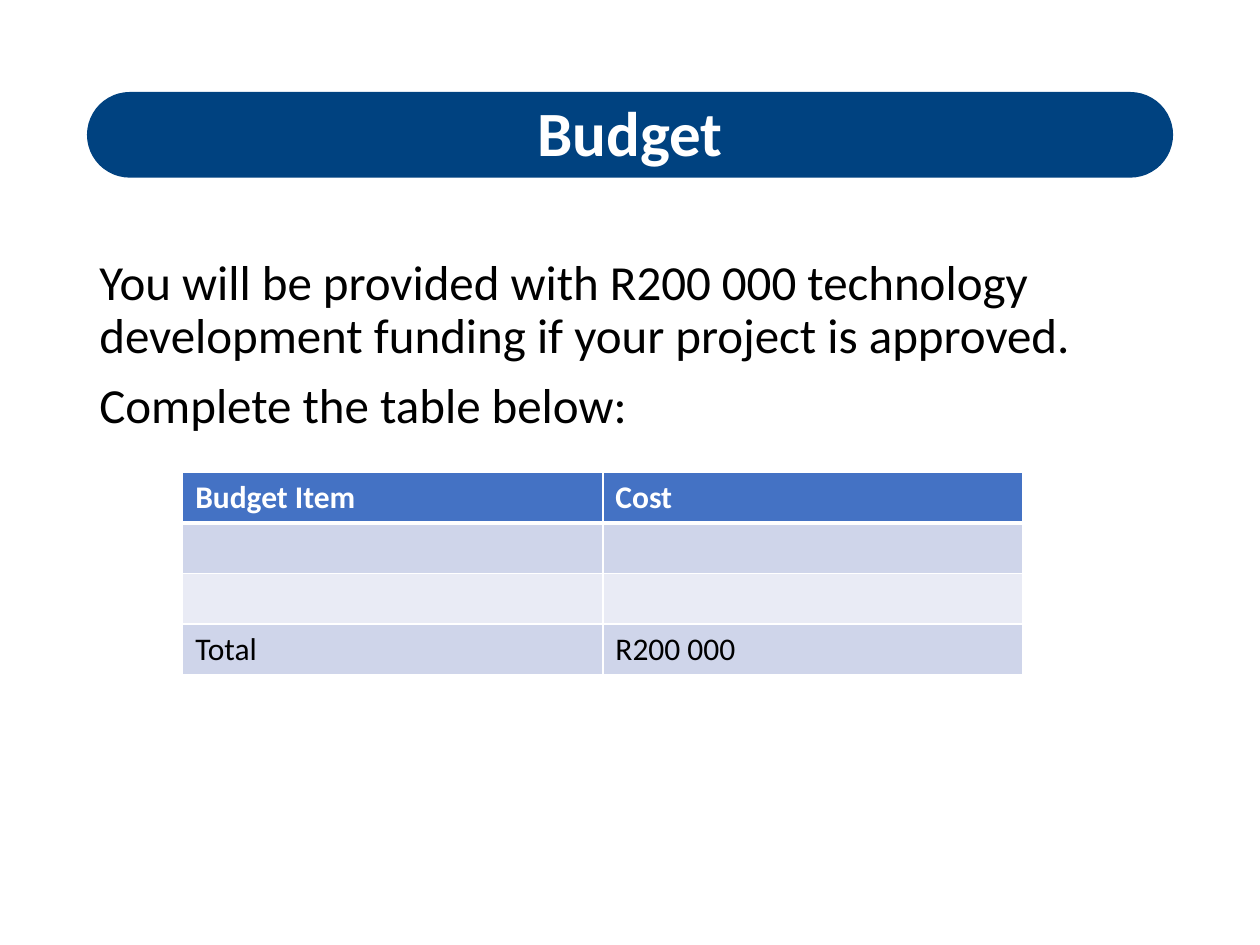
from dataclasses import dataclass
from typing import NamedTuple

from lxml import etree
from pptx import Presentation
from pptx.dml.color import RGBColor
from pptx.enum.shapes import MSO_SHAPE
from pptx.enum.text import MSO_ANCHOR, PP_ALIGN
from pptx.oxml.ns import qn
from pptx.util import Inches, Pt

PILL = MSO_SHAPE.ROUNDED_RECTANGLE
TOP, MIDDLE = MSO_ANCHOR.TOP, MSO_ANCHOR.MIDDLE
LEFT, CENTER = PP_ALIGN.LEFT, PP_ALIGN.CENTER


@dataclass(frozen=True)
class Theme:
    font: str = "Calibri"
    white: str = "FFFFFF"
    black: str = "000000"
    navy: str = "004280"
    head: str = "4472C4"
    bands: tuple[str, str] = ("CFD5EA", "E9EBF5")
    title: int = 36
    body: int = 28
    cell: int = 18
    thin: int = 1
    thick: int = 3


class Box(NamedTuple):
    left: float
    top: float
    width: float
    height: float

    def emu(self) -> list[int]:
        return [Inches(side) for side in self]


class Row(NamedTuple):
    item: str = ""
    cost: str = ""


THEME = Theme()
BAR = Box(0.69, 0.73, 8.62, 0.68)
TITLE = Box(0.69, 0.7, 8.62, 0.76)
BODY = Box(0.69, 2, 8.62, 1.6)
GRID = Box(1.45, 3.75, 6.67, 1.6)
LINES = [
    "You will be provided with R200 000 technology development funding "
    "if your project is approved.",
    "Complete the table below:",
]
ROWS = [Row("Budget Item", "Cost"), Row(), Row(), Row("Total", "R200 000")]


def assign(target, values: dict) -> None:
    for name, value in values.items():
        setattr(target, name, value)


def style(font, size: int, color: str, bold: bool = False) -> None:
    assign(font, {"name": THEME.font, "size": Pt(size), "bold": bold})
    font.color.rgb = RGBColor.from_string(color)


def paint(fill, color: str) -> None:
    fill.solid()
    fill.fore_color.rgb = RGBColor.from_string(color)


def add_title(slide) -> None:
    bar = slide.shapes.add_shape(PILL, *BAR.emu())
    bar.adjustments[0] = 0.5
    bar.shadow.inherit = False
    paint(bar.fill, THEME.navy)
    bar.line.fill.background()

    title = slide.shapes.title
    title.element.addprevious(bar.element)
    assign(title, dict(zip(("left", "top", "width", "height"), TITLE.emu())))
    frame = title.text_frame
    frame.text = "Budget"
    assign(frame, {"vertical_anchor": MIDDLE, "word_wrap": True})
    para = frame.paragraphs[0]
    assign(para, {"alignment": CENTER, "line_spacing": 0.9})
    style(para.runs[0].font, THEME.title, THEME.white, True)


def add_body(slide) -> None:
    frame = slide.shapes.add_textbox(*BODY.emu()).text_frame
    assign(frame, {"word_wrap": True, "vertical_anchor": TOP})
    for index, line in enumerate(LINES):
        para = frame.add_paragraph() if index else frame.paragraphs[0]
        para.text = line
        assign(para, {"alignment": LEFT, "line_spacing": 0.9,
                      "space_before": Pt(10 if index else 0)})
        style(para.runs[0].font, THEME.body, THEME.black)


def add_edges(cell, widths: dict[str, int]) -> None:
    """Draw white cell borders; widths in points, keyed L, R, T, B in order."""
    props = cell._tc.get_or_add_tcPr()
    for place, (side, width) in enumerate(widths.items()):
        edge = etree.Element(qn(f"a:ln{side}"), w=str(Pt(width)))
        fill = etree.SubElement(edge, qn("a:solidFill"))
        etree.SubElement(fill, qn("a:srgbClr"), val=THEME.white)
        props.insert(place, edge)


def add_grid(slide) -> None:
    table = slide.shapes.add_table(len(ROWS), len(Row._fields),
                                   *GRID.emu()).table
    for index, row in enumerate(ROWS):
        head = index == 0
        color = THEME.head if head else THEME.bands[(index - 1) % 2]
        edges = {
            "L": THEME.thin,
            "R": THEME.thin,
            "T": THEME.thick if index == 1 else THEME.thin,
            "B": THEME.thick if head else THEME.thin,
        }
        for column, text in enumerate(row):
            cell = table.cell(index, column)
            cell.text = text
            paint(cell.fill, color)
            add_edges(cell, edges)
            style(cell.text_frame.paragraphs[0].font, THEME.cell,
                  THEME.white if head else THEME.black, head)


def main() -> None:
    deck = Presentation()
    assign(deck, {"slide_width": Inches(10), "slide_height": Inches(7.5)})
    slide = deck.slides.add_slide(deck.slide_layouts.get_by_name("Title Only"))
    add_title(slide)
    add_body(slide)
    add_grid(slide)
    deck.save("out.pptx")


if __name__ == "__main__":
    main()
